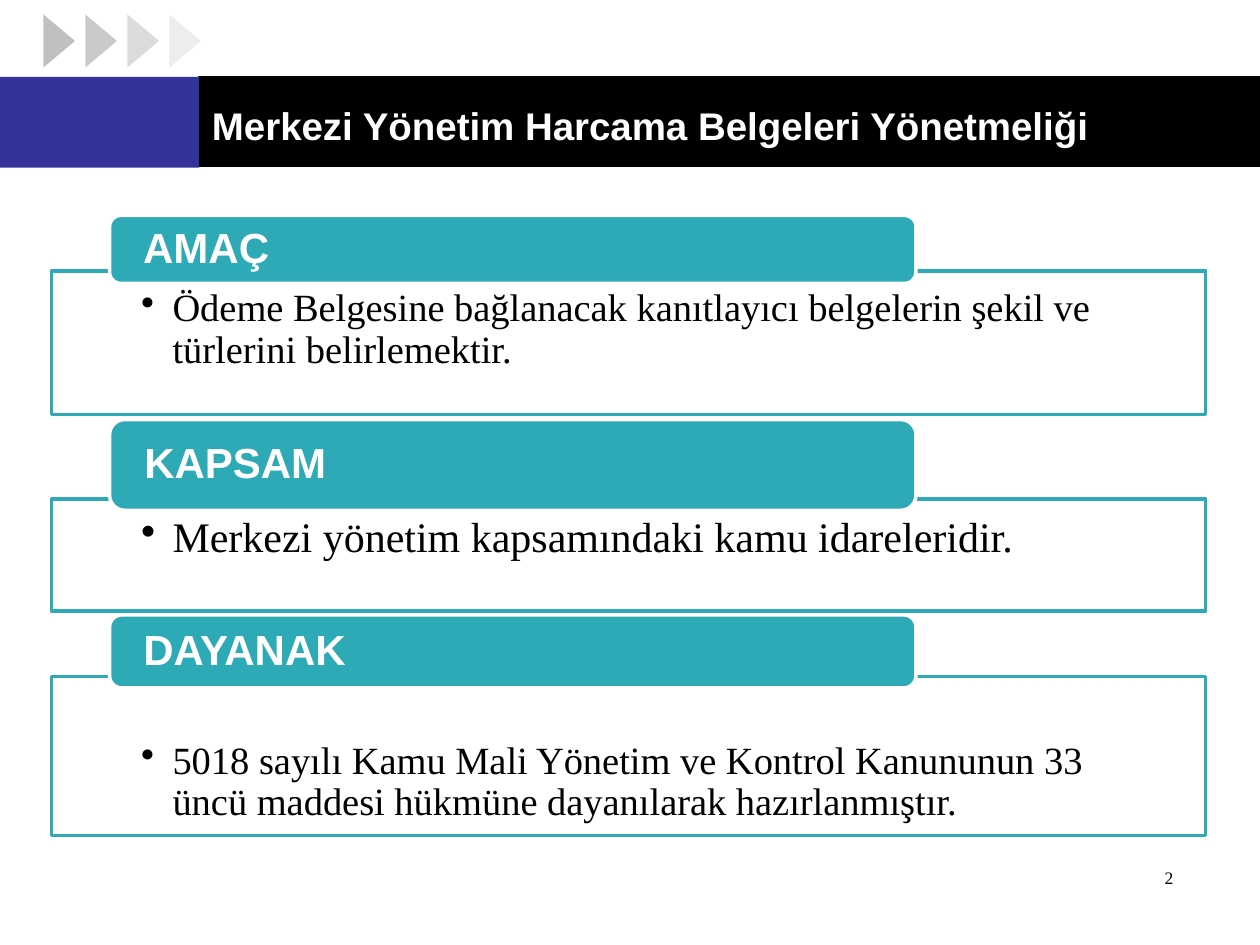
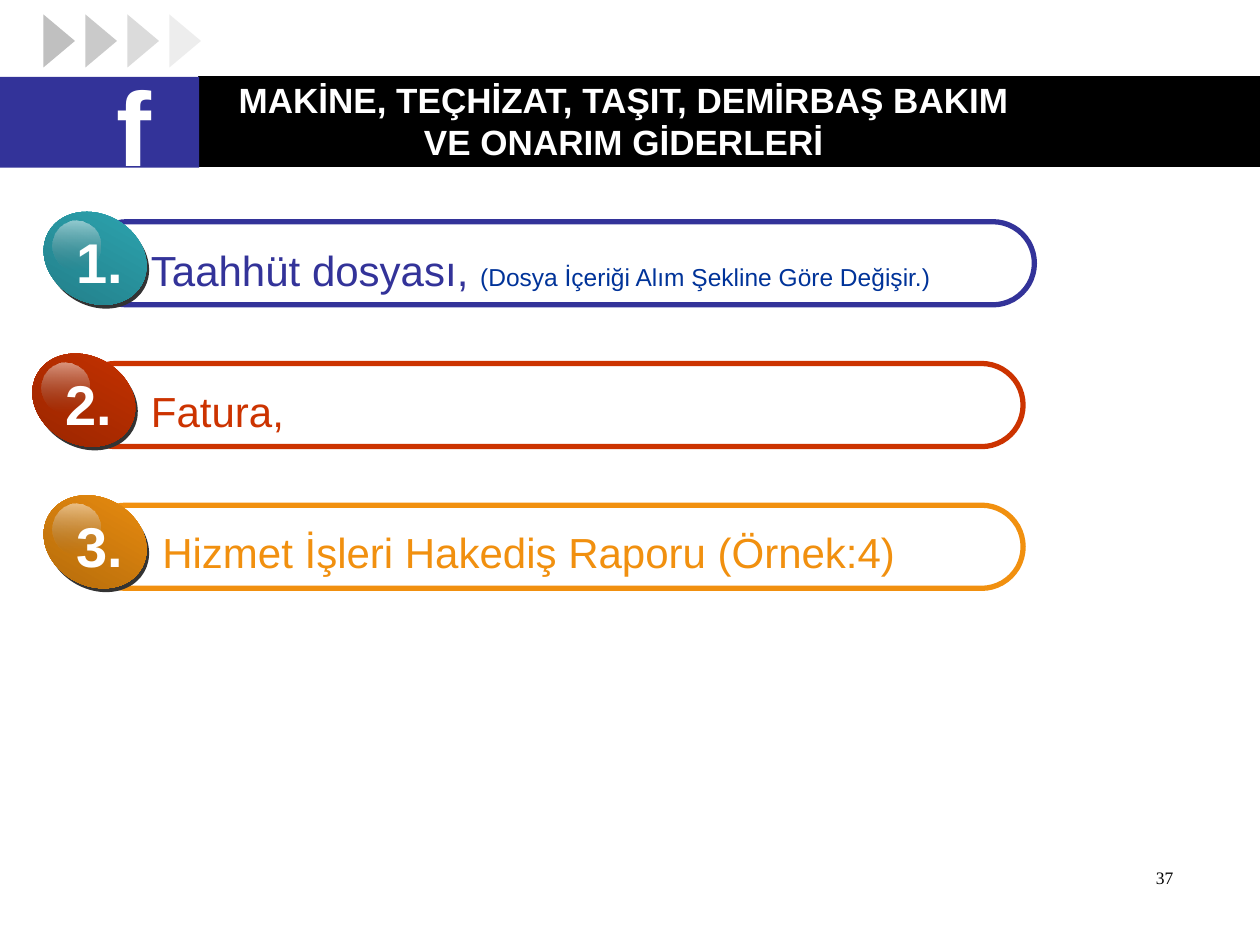
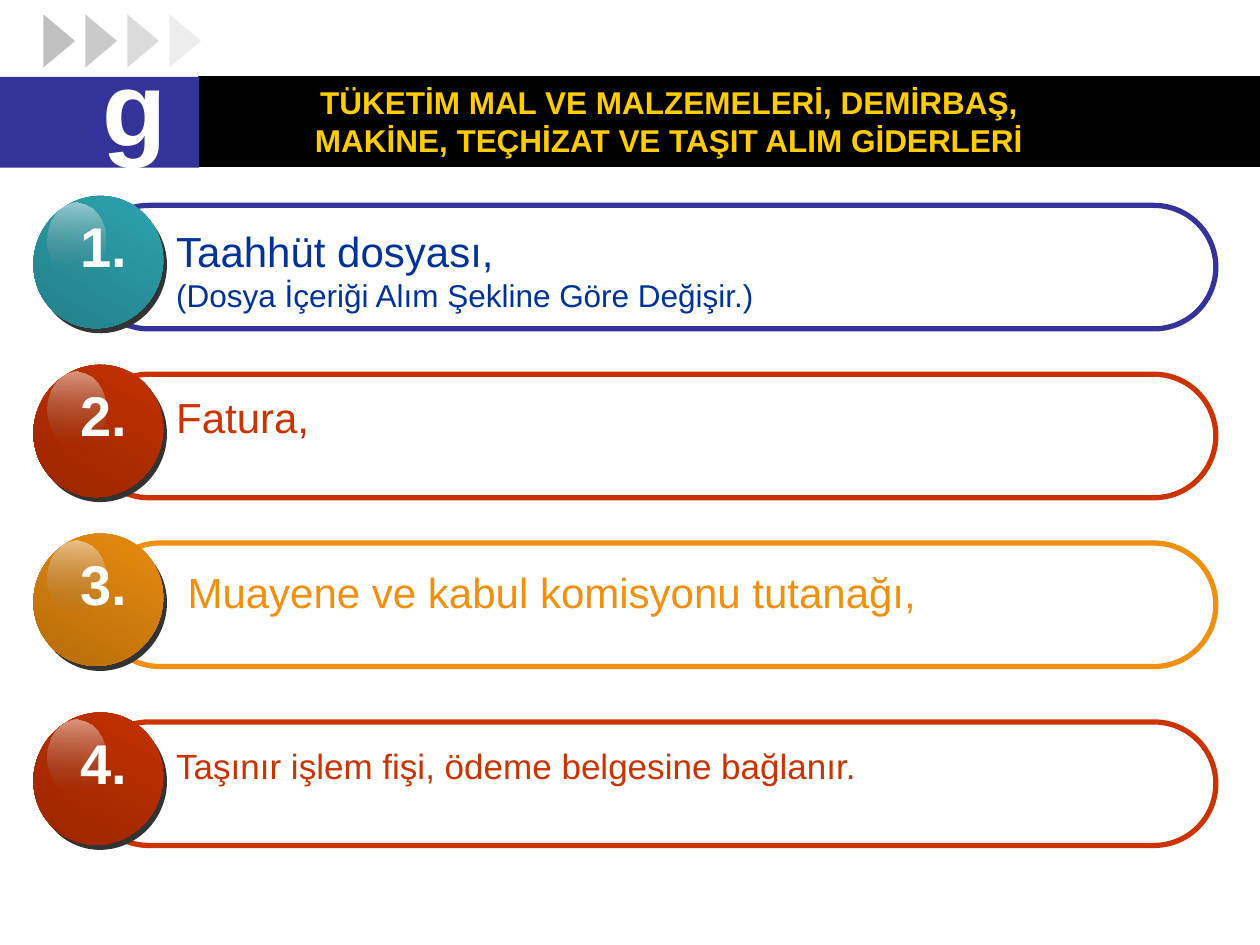
from lxml import etree
from pptx import Presentation
from pptx.dml.color import RGBColor
from pptx.enum.shapes import MSO_SHAPE
from pptx.enum.text import MSO_ANCHOR, MSO_AUTO_SIZE, PP_ALIGN
from pptx.oxml.ns import qn
from pptx.util import Inches, Pt

RECTANGLE = MSO_SHAPE.RECTANGLE
ROUNDED = MSO_SHAPE.ROUNDED_RECTANGLE
ELLIPSE = MSO_SHAPE.OVAL
TRIANGLE = MSO_SHAPE.ISOSCELES_TRIANGLE
TOP, MIDDLE = MSO_ANCHOR.TOP, MSO_ANCHOR.MIDDLE
LEFT, CENTER, RIGHT = PP_ALIGN.LEFT, PP_ALIGN.CENTER, PP_ALIGN.RIGHT

SLIDE_WIDTH, SLIDE_HEIGHT = Inches(10), Inches(7.5)
COLUMN, ROW = SLIDE_WIDTH / 10, SLIDE_HEIGHT / 7.5
TITLE_ONLY = 5
SANS, SERIF = "Arial", "Times New Roman"
TILT = 29.3

COLORS = {
    "black": "000000",
    "white": "FFFFFF",
    "indigo": "333399",
    "navy": "003399",
    "silver": "C0C0C0",
    "shade": "333333",
    "gloss": "767676",
    "yellow": "FFCC00",
    "teal": "2EA9B6",
    "teal_dark": "217982",
    "red": "CC3300",
    "red_dark": "922400",
    "orange": "F1900F",
    "orange_dark": "AC670B",
}

SMALL_BADGE = {
    "capsule_height": 0.66, "disc": (0.85, 0.7), "rise": 0.06,
    "shadow": (0.02, 0.03), "gloss": (0.09, 0.05, 0.38, 0.4), "number": (0.18, 0.06),
}
LARGE_BADGE = {
    "capsule_height": 0.98, "disc": (1.02, 1.06), "rise": 0.08,
    "shadow": (0.03, 0.04), "gloss": (0.11, 0.06, 0.46, 0.59), "number": (0.27, 0.08),
}


def color(name):
    return RGBColor.from_string(COLORS[name])


def place(left, top, width, height):
    return [round(left * COLUMN), round(top * ROW), round(width * COLUMN), round(height * ROW)]


def apply(target, values):
    for name, value in values.items():
        setattr(target, name, value)


def set_opacity(shape, *percents):
    for element, percent in zip(shape.fill._xPr.iter(qn("a:srgbClr")), percents):
        etree.SubElement(element, qn("a:alpha"), val=str(percent * 1000))


def add_shape(slide, kind, box, fill=None, line=None, line_width=2, rotation=0):
    shape = slide.shapes.add_shape(kind, *place(*box))
    shape.shadow.inherit = False
    shape.rotation = rotation
    if isinstance(fill, tuple):
        shape.fill.gradient()
        shape.fill.gradient_angle = 270
        for stop, name in zip(shape.fill.gradient_stops, fill):
            stop.color.rgb = color(name)
    elif fill:
        shape.fill.solid()
        shape.fill.fore_color.rgb = color(fill)
    else:
        shape.fill.background()
    if line:
        shape.line.color.rgb = color(line)
        shape.line.width = Pt(line_width)
    else:
        shape.line.fill.background()
    return shape


def write(shape, lines, size, ink, font=SANS, bold=False, align=LEFT, anchor=TOP,
          margins=(0.1, 0.05, 0.1, 0.05), spacing=None):
    frame = shape.text_frame
    sides = ("margin_left", "margin_top", "margin_right", "margin_bottom")
    apply(frame, {"word_wrap": True, "auto_size": MSO_AUTO_SIZE.NONE, "vertical_anchor": anchor})
    apply(frame, dict(zip(sides, map(Inches, margins))))
    for index, runs in enumerate(lines):
        paragraph = frame.add_paragraph() if index else frame.paragraphs[0]
        apply(paragraph, {"alignment": align, **(spacing or {})})
        for text, *style in runs:
            run = paragraph.add_run()
            run.text = text
            run_size, run_ink = style or (size, ink)
            apply(run.font, {"name": font, "size": Pt(run_size), "bold": bold})
            run.font.color.rgb = color(run_ink)


def add_text(slide, box, lines, size, ink, **style):
    write(slide.shapes.add_textbox(*place(*box)), lines, size, ink, **style)


def move_to_layout(shape, layout):
    layout.shapes._spTree.append(shape._element)


def build_layout(slide, layout):
    for placeholder in list(layout.placeholders):
        if placeholder.placeholder_format.idx:
            layout.shapes._spTree.remove(placeholder._element)
    parts = [
        add_shape(slide, RECTANGLE, (1.58, 0.61, 8.42, 0.71), "black", "black", 0.75),
        add_shape(slide, RECTANGLE, (0, 0.61, 1.58, 0.72), "indigo"),
    ]
    for index, opacity in enumerate((100, 84, 56, 27)):
        box = (0.26 + index / 3, 0.2, 0.42, 0.25)
        arrow = add_shape(slide, TRIANGLE, box, "silver", rotation=90)
        set_opacity(arrow, opacity)
        parts.append(arrow)
    for part in parts:
        move_to_layout(part, layout)


def set_title(slide, text, box, size, ink="white"):
    title = slide.shapes.title
    apply(title, dict(zip(("left", "top", "width", "height"), place(*box))))
    write(title, [[(text,)]], size, ink, bold=True, align=CENTER, anchor=MIDDLE)


def add_section_letter(slide, letter, top):
    add_text(slide, (0.2, top, 1.73, 0.62), [[(letter,)]], 60, "white",
             bold=True, align=CENTER, anchor=MIDDLE)


def add_page_number(slide, number):
    add_text(slide, (7.33, 6.83, 2.08, 0.5), [[(number,)]], 10, "black", font=SERIF, align=RIGHT)


def add_bullets(shape):
    for paragraph in shape.text_frame.paragraphs:
        properties = paragraph._p.get_or_add_pPr()
        properties.set("marL", str(Inches(0.25)))
        properties.set("indent", str(-Inches(0.25)))
        etree.SubElement(properties, qn("a:buChar"), char="•")


def add_topic(slide, heading, text, size, tab, panel, text_top=0.14):
    body = add_shape(slide, RECTANGLE, (0.41, panel[0], 9.16, panel[1]), "white", "teal")
    write(body, [[(text,)]], size, "black", font=SERIF,
          margins=(0.71, text_top, 0.71, 0), spacing={"line_spacing": 0.9})
    add_bullets(body)
    label = add_shape(slide, ROUNDED, (0.87, tab[0], 6.4, tab[1]), "teal", "white")
    write(label, [[(heading,)]], 24, "white", bold=True, anchor=MIDDLE,
          margins=(0.24, 0, 0.24, 0), spacing={"line_spacing": 0.9})


def add_badge(slide, number, left, top, hue, badge):
    width, height = badge["disc"]
    shift_x, shift_y = badge["shadow"]
    gloss_x, gloss_y, *gloss_size = badge["gloss"]
    number_x, number_y = badge["number"]
    add_shape(slide, ELLIPSE, (left + shift_x, top + shift_y, width, height), "shade", rotation=TILT)
    add_shape(slide, ELLIPSE, (left, top, width, height), (hue, hue + "_dark"), rotation=TILT)
    gloss = add_shape(slide, ELLIPSE, (left + gloss_x, top + gloss_y, *gloss_size), ("white", "gloss"))
    set_opacity(gloss, 50, 0)
    add_text(slide, (left + number_x, top + number_y, 0.57, 0.64), [[(f"{number}.",)]], 32, "white",
             bold=True, align=CENTER, margins=(0, 0.05, 0, 0.05))


def add_item(slide, number, top, capsule, disc_left, hue, badge, text_at, lines, ink,
             size=24, outline=None, spacing=None):
    left, right = capsule
    box = (left, top, right - left, badge["capsule_height"])
    outlined = add_shape(slide, ROUNDED, box, line=outline or hue, line_width=3)
    outlined.adjustments[0] = 0.5
    add_badge(slide, number, disc_left, top - badge["rise"], hue, badge)
    add_text(slide, (*text_at, 7.3, 0.6), lines, size, ink, spacing=spacing)


def build_regulation(slide):
    set_title(slide, "Merkezi Yönetim Harcama Belgeleri Yönetmeliği", (1.54, 0.68, 7.24, 0.62), 22)
    add_topic(slide, "AMAÇ",
              "Ödeme Belgesine bağlanacak kanıtlayıcı belgelerin şekil ve türlerini belirlemektir.",
              22, (1.71, 0.54), (2.15, 1.14))
    add_topic(slide, "KAPSAM", "Merkezi yönetim kapsamındaki kamu idareleridir.",
              24, (3.33, 0.72), (3.96, 0.89))
    add_topic(slide, "DAYANAK",
              "5018 sayılı Kamu Mali Yönetim ve Kontrol Kanununun 33 üncü maddesi hükmüne "
              "dayanılarak hazırlanmıştır.",
              22, (4.88, 0.58), (5.37, 1.26), text_top=0.51)
    add_page_number(slide, "2")


def build_maintenance(slide):
    set_title(slide, "MAKİNE, TEÇHİZAT, TAŞIT, DEMİRBAŞ BAKIM VE ONARIM GİDERLERİ",
              (1.7, 0.65, 6.5, 0.62), 20)
    add_section_letter(slide, "f", 0.68)
    tops = [1.76 + 1.125 * index for index in range(3)]
    commitment = [[("Taahhüt dosyası, ",),
                   ("(Dosya İçeriği Alım Şekline Göre Değişir.)", 14, "navy")]]
    add_item(slide, 1, tops[0], (0.68, 8.21), 0.33, "teal", SMALL_BADGE, (1.1, 1.89),
             commitment, "indigo", outline="indigo")
    add_item(slide, 2, tops[1], (0.59, 8.12), 0.24, "red", SMALL_BADGE, (1.1, 2.93),
             [[("Fatura,",)]], "red", spacing={"line_spacing": 1.2, "space_before": Pt(5)})
    add_item(slide, 3, tops[2], (0.67, 8.12), 0.33, "orange", SMALL_BADGE, (1.19, 4.13),
             [[("Hizmet İşleri Hakediş Raporu (Örnek:4)",)]], "orange")
    add_page_number(slide, "37")


def build_purchases(slide):
    set_title(slide, "TÜKETİM MAL VE MALZEMELERİ, DEMİRBAŞ, MAKİNE, TEÇHİZAT VE TAŞIT ALIM GİDERLERİ",
              (2.06, 0.65, 6.5, 0.62), 18, "yellow")
    add_section_letter(slide, "g", 0.52)
    tight = {"line_spacing": 0.9, "space_before": Pt(5)}
    commitment = [[("Taahhüt dosyası,",)],
                  [("(Dosya İçeriği Alım Şekline Göre Değişir.)", 18, "navy")]]
    items = [
        (1.63, 0.69, "teal", (1.3, 1.74), commitment, "navy", {"outline": "indigo"}),
        (2.97, 0.69, "red", (1.3, 3.1), [[("Fatura,",)]], "red", {"spacing": tight}),
        (4.31, 0.78, "orange", (1.39, 4.45), [[("Muayene ve kabul komisyonu tutanağı,",)]],
         "orange", {}),
        (5.73, 0.69, "red", (1.3, 5.9), [[("Taşınır işlem fişi, ödeme belgesine bağlanır.",)]],
         "red", {"size": 20, "spacing": tight}),
    ]
    for number, (top, left, hue, text_at, lines, ink, style) in enumerate(items, 1):
        add_item(slide, number, top, (left, 9.65), 0.27, hue, LARGE_BADGE, text_at, lines, ink, **style)


def main():
    presentation = Presentation()
    apply(presentation, {"slide_width": SLIDE_WIDTH, "slide_height": SLIDE_HEIGHT})
    layout = presentation.slide_layouts[TITLE_ONLY]
    builders = (build_regulation, build_maintenance, build_purchases)
    slides = [presentation.slides.add_slide(layout) for builder in builders]
    build_layout(slides[0], layout)
    for builder, slide in zip(builders, slides):
        builder(slide)
    presentation.save("out.pptx")


if __name__ == "__main__":
    main()
